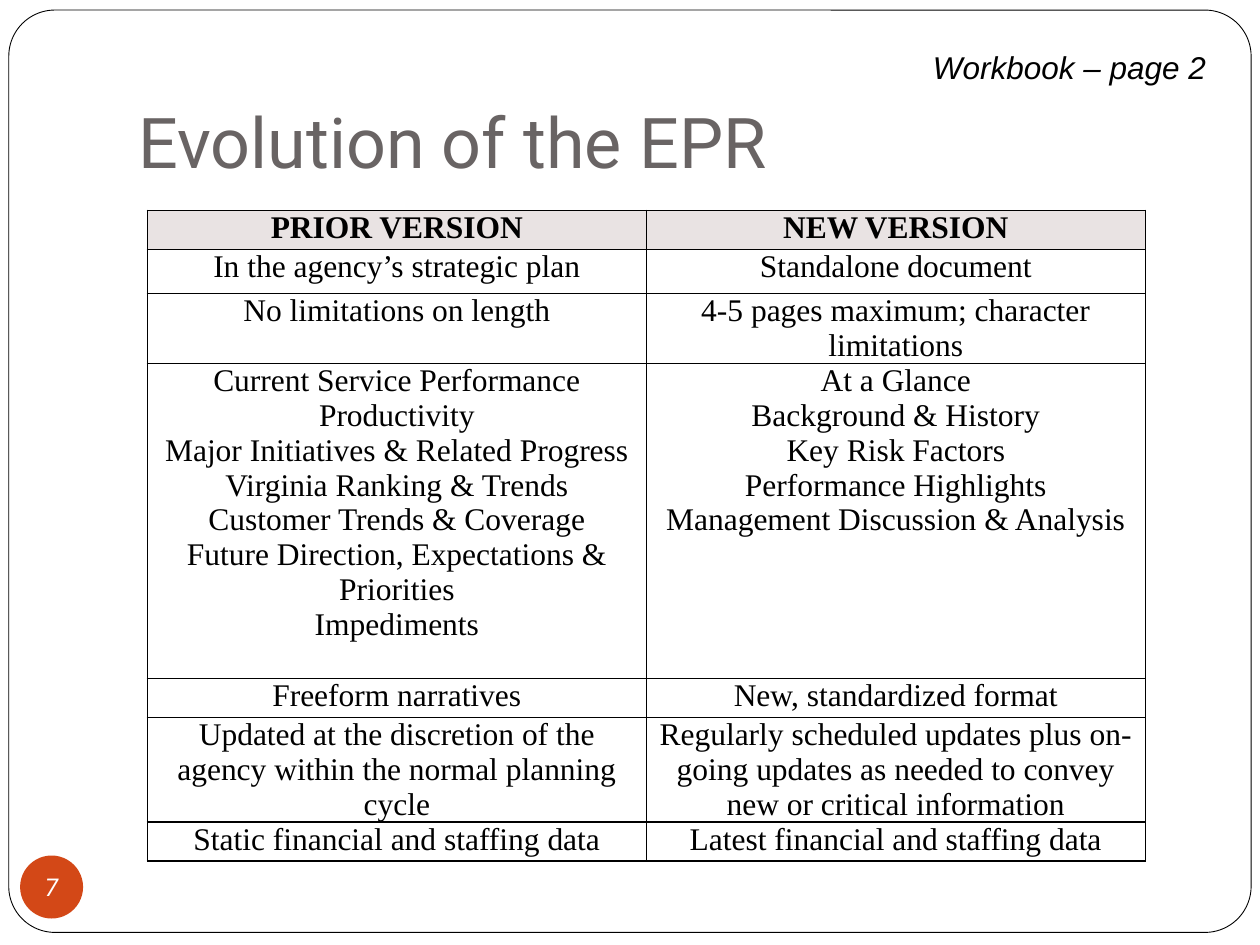
import pptx
import pptx.dml.color
import pptx.enum.shapes
import pptx.enum.text
import pptx.oxml
import pptx.oxml.ns
import pptx.util
from pptx.util import Inches

RGBColor = pptx.dml.color.RGBColor
BLACK = RGBColor(0x00, 0x00, 0x00)
WHITE = RGBColor(0xFF, 0xFF, 0xFF)
TITLE_GRAY = RGBColor(0x69, 0x64, 0x64)
BADGE_ORANGE = RGBColor(0xD3, 0x48, 0x17)
HEADER_FILL = RGBColor(0xE9, 0xE3, 0xE3)

ALIGN = pptx.enum.text.PP_ALIGN
ANCHOR = pptx.enum.text.MSO_ANCHOR
SHAPE = pptx.enum.shapes.MSO_SHAPE

TITLE_ONLY_LAYOUT = 5
COLUMN_WIDTH = 3.96
ROW_HEIGHTS = [0.31, 0.35, 0.55, 2.5, 0.31, 0.83, 0.31]
VERSIONS = [
    ("PRIOR VERSION", "NEW VERSION"),
    ("In the agency’s strategic plan", "Standalone document"),
    ("No limitations on length", "4-5 pages maximum; character limitations"),
    (
        "Current Service Performance\n"
        "Productivity\n"
        "Major Initiatives & Related Progress\n"
        "Virginia Ranking & Trends\n"
        "Customer Trends & Coverage\n"
        "Future Direction, Expectations & Priorities\n"
        "Impediments",
        "At a Glance\n"
        "Background & History\n"
        "Key Risk Factors\n"
        "Performance Highlights\n"
        "Management Discussion & Analysis",
    ),
    ("Freeform narratives", "New, standardized format"),
    (
        "Updated at the discretion of the agency within the normal planning cycle",
        "Regularly scheduled updates plus on-going updates as needed to convey "
        "new or critical information",
    ),
    ("Static financial and staffing data", "Latest financial and staffing data"),
]


def write_text(text_frame, text, font_name, size, color, alignment,
               bold=False, italic=False):
    text_frame.text = text
    for paragraph in text_frame.paragraphs:
        paragraph.alignment = alignment
        for run in paragraph.runs:
            run.font.name = font_name
            run.font.size = pptx.util.Pt(size)
            run.font.color.rgb = color
            run.font.bold = bold
            run.font.italic = italic


def add_frame(slide):
    """Add the rounded page border behind everything else."""
    frame = slide.shapes.add_shape(
        SHAPE.ROUNDED_RECTANGLE,
        Inches(0.07), Inches(0.08), Inches(9.86), Inches(7.32))
    frame.adjustments[0] = 0.05
    frame.shadow.inherit = False
    frame.fill.solid()
    frame.fill.fore_color.rgb = WHITE
    frame.line.color.rgb = BLACK
    frame.line.width = pptx.util.Pt(0.5)
    slide.shapes.element.insert(2, frame.element)


def set_title(slide, text):
    title = slide.shapes.title
    title.left, title.top = Inches(1), Inches(0.3)
    title.width, title.height = Inches(8.5), Inches(1.25)
    text_frame = title.text_frame
    text_frame.auto_size = pptx.enum.text.MSO_AUTO_SIZE.NONE
    text_frame.vertical_anchor = ANCHOR.BOTTOM
    text_frame.margin_bottom = Inches(0.1)
    write_text(text_frame, text, "Roboto", 40, TITLE_GRAY, ALIGN.LEFT)


def add_page_badge(slide, number):
    badge = slide.shapes.add_shape(
        SHAPE.OVAL, Inches(0.16), Inches(6.79), Inches(0.5), Inches(0.5))
    badge.shadow.inherit = False
    badge.fill.solid()
    badge.fill.fore_color.rgb = BADGE_ORANGE
    badge.line.fill.background()
    text_frame = badge.text_frame
    text_frame.word_wrap = False
    text_frame.vertical_anchor = ANCHOR.MIDDLE
    text_frame.margin_left = text_frame.margin_right = 0
    text_frame.margin_top = text_frame.margin_bottom = 0
    write_text(text_frame, number, "Roboto", 14, WHITE, ALIGN.CENTER, italic=True)


def add_workbook_note(slide, text):
    note = slide.shapes.add_textbox(
        Inches(6.17), Inches(0.33), Inches(3.5), Inches(0.4))
    note.text_frame.word_wrap = True
    write_text(note.text_frame, text, "Arial", 18, BLACK, ALIGN.RIGHT, italic=True)


def set_cell_borders(cell):
    """Draw a 1 pt line on all four sides; must run before the cell is filled."""
    properties = cell._tc.get_or_add_tcPr()
    for side in ("lnL", "lnR", "lnT", "lnB"):
        properties.append(pptx.oxml.parse_xml(
            f'<a:{side} {pptx.oxml.ns.nsdecls("a")} w="{pptx.util.Pt(1)}">'
            f'<a:solidFill><a:srgbClr val="{BLACK}"/></a:solidFill></a:{side}>'))


def format_cell(cell, text, is_header):
    set_cell_borders(cell)
    if is_header:
        cell.fill.solid()
        cell.fill.fore_color.rgb = HEADER_FILL
    else:
        cell.fill.background()
    cell.margin_left = cell.margin_right = Inches(0.07)
    cell.margin_top = cell.margin_bottom = 0
    write_text(cell.text_frame, text, "Times New Roman", 18, BLACK,
               ALIGN.CENTER, bold=is_header)


def add_version_table(slide):
    table = slide.shapes.add_table(
        len(VERSIONS), 2, Inches(1.17), Inches(1.67),
        Inches(2 * COLUMN_WIDTH), Inches(sum(ROW_HEIGHTS))).table
    table.horz_banding = False
    for column in table.columns:
        column.width = Inches(COLUMN_WIDTH)
    for row_index, (height, texts) in enumerate(zip(ROW_HEIGHTS, VERSIONS)):
        row = table.rows[row_index]
        row.height = Inches(height)
        for cell, text in zip(row.cells, texts):
            format_cell(cell, text, is_header=row_index == 0)


def main():
    presentation = pptx.Presentation()
    presentation.slide_width = Inches(10)
    presentation.slide_height = Inches(7.5)
    slide = presentation.slides.add_slide(
        presentation.slide_layouts[TITLE_ONLY_LAYOUT])
    add_frame(slide)
    set_title(slide, "Evolution of the EPR")
    add_page_badge(slide, "7")
    add_version_table(slide)
    add_workbook_note(slide, "Workbook – page 2")
    presentation.save("out.pptx")


if __name__ == "__main__":
    main()
